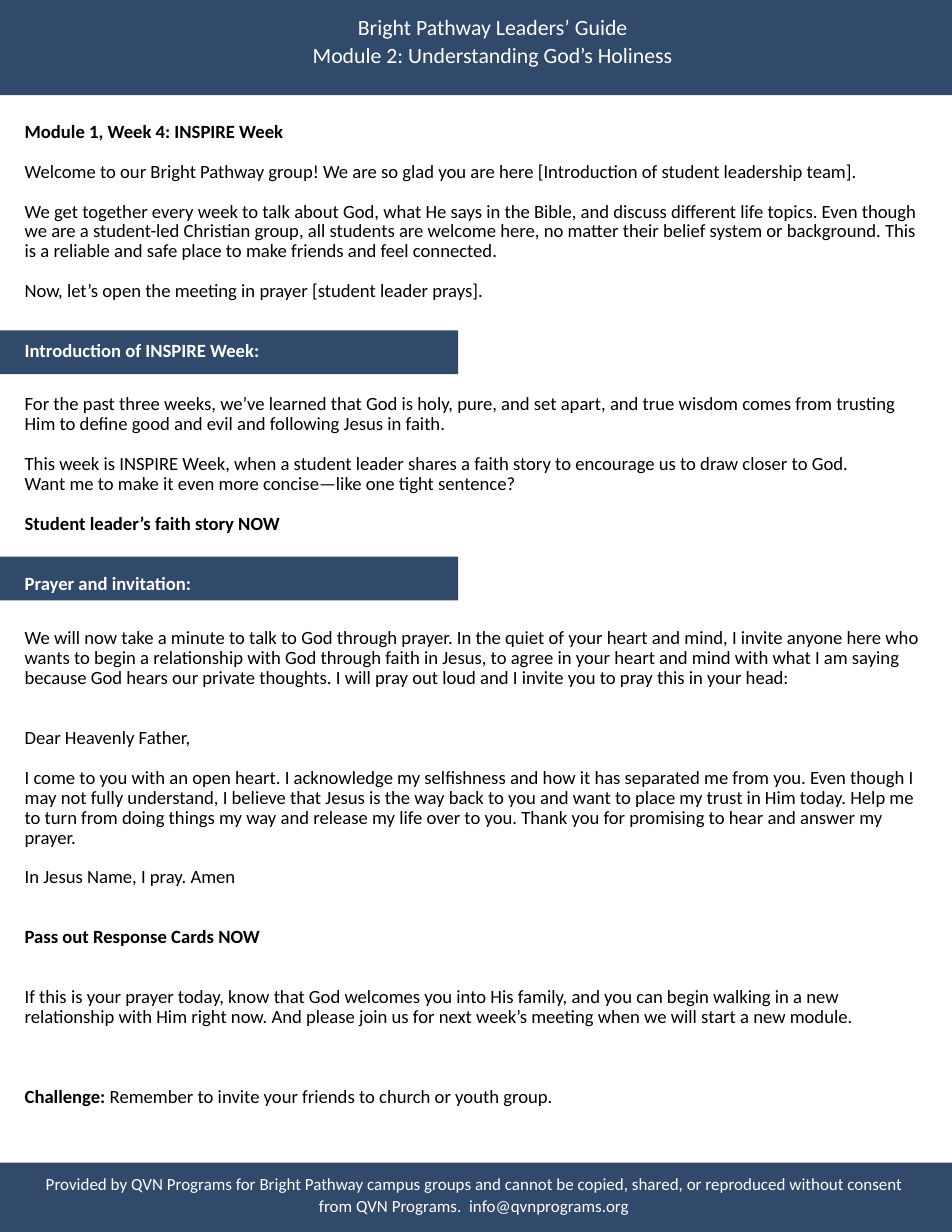
import pptx
import pptx.dml.color
import pptx.enum.shapes
import pptx.enum.text
import pptx.oxml.ns
import pptx.util
from lxml import etree

Inches, Pt = pptx.util.Inches, pptx.util.Pt
NAVY, WHITE, BLACK = "31496A", "FFFFFF", "000000"
LINE = 12.8  # body line pitch in points

# Body script: blank lines before, bold lead, plain text, colour
BODY = [
    (0, "Module 1, Week 4: INSPIRE Week", "", BLACK),
    (1, "", "Welcome to our Bright Pathway group! We are so glad you are here "
     "[Introduction of student leadership team].", BLACK),
    (1, "", "We get together every week to talk about God, what He says in the Bible, and "
     "discuss different life topics. Even though we are a student-led Christian group, all "
     "students are welcome here, no matter their belief system or background. This is a "
     "reliable and safe place to make friends and feel connected.", BLACK),
    (1, "", "Now, let’s open the meeting in prayer [student leader prays].", BLACK),
    (2, "Introduction of INSPIRE Week:", "", WHITE),
    (1.67, "", "For the past three weeks, we’ve learned that God is holy, pure, and set apart, "
     "and true wisdom comes from trusting Him to define good and evil and following Jesus in "
     "faith.", BLACK),
    (1, "", "This week is INSPIRE Week, when a student leader shares a faith story to "
     "encourage us to draw closer to God.", BLACK),
    (0, "", "Want me to make it even more concise—like one tight sentence?", BLACK),
    (1, "Student leader’s faith story NOW", "", BLACK),
    (2, "Prayer and invitation:", "", WHITE),
    (1.75, "", "We will now take a minute to talk to God through prayer. In the quiet of your "
     "heart and mind, I invite anyone here who wants to begin a relationship with God through "
     "faith in Jesus, to agree in your heart and mind with what I am saying because God hears "
     "our private thoughts. I will pray out loud and I invite you to pray this in your head:",
     BLACK),
    (2, "", "Dear Heavenly Father,", BLACK),
    (1, "", "I come to you with an open heart. I acknowledge my selfishness and how it has "
     "separated me from you. Even though I may not fully understand, I believe that Jesus is "
     "the way back to you and want to place my trust in Him today. Help me to turn from doing "
     "things my way and release my life over to you. Thank you for promising to hear and "
     "answer my prayer.", BLACK),
    (1, "", "In Jesus Name, I pray. Amen", BLACK),
    (2, "Pass out Response Cards NOW", "", BLACK),
    (2, "", "If this is your prayer today, know that God welcomes you into His family, and you "
     "can begin walking in a new relationship with Him right now. And please join us for next "
     "week’s meeting when we will start a new module.", BLACK),
    (3, "Challenge:", " Remember to invite your friends to church or youth group.", BLACK),
]


def tint(code):
    return pptx.dml.color.RGBColor.from_string(code)


def write(frame, text, lead="", size=12, color=BLACK, pitch=LINE, gap=0, center=False):
    """Add one paragraph: an optional bold lead, then plain text."""
    par = frame.paragraphs[0]
    if par.runs:
        par = frame.add_paragraph()
    align = pptx.enum.text.PP_ALIGN
    par.alignment = align.CENTER if center else align.LEFT
    par.line_spacing = Pt(pitch)
    par.space_before, par.space_after = Pt(gap), Pt(0)
    # No bullet and no hanging indent
    props = par._p.get_or_add_pPr()
    props.set("marL", "0")
    props.set("indent", "0")
    etree.SubElement(props, pptx.oxml.ns.qn("a:buNone"))
    for part, bold in ((lead, True), (text, False)):
        if part:
            run = par.add_run()
            run.text = part
            font = run.font
            font.name, font.size, font.bold = "Calibri", Pt(size), bold
            font.color.rgb = tint(color)


class Page:
    def __init__(self, deck):
        self.slide = deck.slides.add_slide(deck.slide_layouts[1])
        self.shapes = self.slide.shapes

    def bar(self, x, y, w, h):
        kind = pptx.enum.shapes.MSO_SHAPE.RECTANGLE
        bar = self.shapes.add_shape(kind, Inches(x), Inches(y), Inches(w), Inches(h))
        bar.shadow.inherit = False
        bar.fill.solid()
        bar.fill.fore_color.rgb = tint(NAVY)
        bar.line.fill.background()

    def place(self, shape, x, y, w, h):
        """Set the box, bring it to the front and return its bare text frame."""
        shape.left, shape.top = Inches(x), Inches(y)
        shape.width, shape.height = Inches(w), Inches(h)
        self.shapes.element.append(shape.element)
        frame = shape.text_frame
        frame.margin_left = frame.margin_right = 0
        frame.margin_top = frame.margin_bottom = 0
        frame.word_wrap = True
        frame.auto_size = pptx.enum.text.MSO_AUTO_SIZE.NONE
        frame.vertical_anchor = pptx.enum.text.MSO_ANCHOR.TOP
        return frame

    def title(self, *box):
        return self.place(self.shapes.title, *box)

    def body(self, *box):
        return self.place(self.slide.placeholders[1], *box)

    def label(self, *box):
        return self.place(self.shapes.add_textbox(0, 0, 0, 0), *box)


def main():
    deck = pptx.Presentation()
    deck.slide_width, deck.slide_height = Inches(8.5), Inches(11)
    page = Page(deck)

    # Header, section and footer bars, bleeding past the page edges
    page.bar(-0.32, -0.16, 9.09, 1.01)
    for top in (2.95, 4.97):
        page.bar(-5, top, 9.09, 0.39)
    page.bar(-0.07, 10.38, 9.1, 1.01)

    # Body script
    frame = page.body(0.22, 1.09, 8, 9.19)
    for blank, lead, text, color in BODY:
        write(frame, text, lead=lead, color=color, gap=round(blank * LINE, 1))

    # Title
    frame = page.title(2.71, 0.11, 3.38, 0.47)
    for text in ("Bright Pathway Leaders’ Guide", "Module 2: Understanding God’s Holiness"):
        write(frame, text, size=14, color=WHITE, pitch=17.9, center=True)

    # Footer
    frame = page.label(0.32, 10.47, 7.82, 0.37)
    write(frame, "Provided by QVN Programs for Bright Pathway campus groups and cannot be "
          "copied, shared, or reproduced without consent from QVN Programs.  "
          "info@qvnprograms.org", size=10.9, color=WHITE, pitch=13.9, center=True)

    deck.save("out.pptx")


if __name__ == "__main__":
    main()
